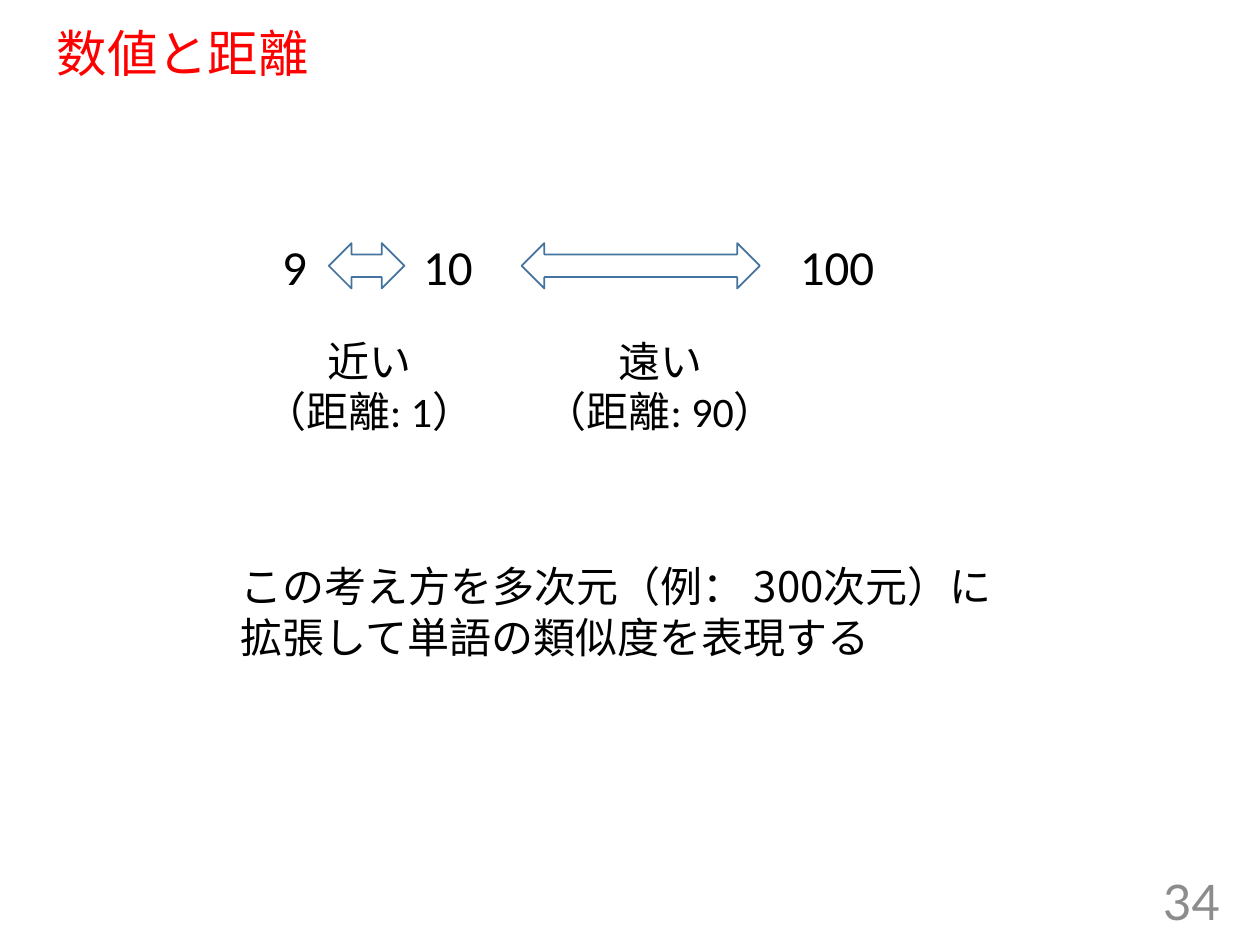
"""Build the slide on numbers and the distance between them."""
from pptx import Presentation
from pptx.dml.color import RGBColor
from pptx.enum.shapes import MSO_SHAPE
from pptx.enum.text import MSO_ANCHOR, PP_ALIGN
from pptx.util import Inches, Pt

RED = RGBColor(0xFF, 0x00, 0x00)
BLACK = RGBColor(0x00, 0x00, 0x00)
GRAY = RGBColor(0x8C, 0x8C, 0x8C)
BLUE = RGBColor(0x43, 0x73, 0x9E)


def write(paragraph, text, size, font, color, align=PP_ALIGN.LEFT):
    paragraph.alignment = align
    run = paragraph.add_run()
    run.text = text
    run.font.size = Pt(size)
    run.font.name = font
    run.font.color.rgb = color


def add_text(box, lines, size, font, color, align=PP_ALIGN.LEFT, wrap=True):
    frame = slide.shapes.add_textbox(*map(Inches, box)).text_frame
    frame.word_wrap = wrap
    for index, line in enumerate(lines):
        paragraph = frame.add_paragraph() if index else frame.paragraphs[0]
        write(paragraph, line, size, font, color, align)
    return frame


presentation = Presentation()
presentation.slide_width = Inches(10)
presentation.slide_height = Inches(7.5)
slide = presentation.slides.add_slide(presentation.slide_layouts[5])

heading = slide.shapes.title
heading.left, heading.top = Inches(0.35), Inches(0.19)
heading.width, heading.height = Inches(9.25), Inches(0.51)
heading.text_frame.vertical_anchor = MSO_ANCHOR.MIDDLE
heading.text_frame.paragraphs[0].line_spacing = 0.9
write(heading.text_frame.paragraphs[0], "数値と距離", 28.8, "Lato", RED)

page_number = add_text((7.53, 6.95, 2.25, 0.4), ["34"], 28, "Lato", GRAY, PP_ALIGN.RIGHT)
page_number.vertical_anchor = MSO_ANCHOR.MIDDLE

for number, left, width in (("9", 2.14, 0.4), ("10", 3.26, 0.6), ("100", 6.25, 0.8)):
    add_text((left, 1.83, width, 0.57), [number], 28, "Calibri", BLACK, wrap=False)

for left, width in ((2.61, 0.6), (4.14, 1.89)):
    gap = slide.shapes.add_shape(
        MSO_SHAPE.LEFT_RIGHT_ARROW, Inches(left), Inches(1.93), Inches(width), Inches(0.36)
    )
    gap.shadow.inherit = False
    gap.fill.background()
    gap.line.color.rgb = BLUE
    gap.line.width = Pt(1)

for left, closeness, distance in ((1.72, "近い", "（距離: 1）"), (4.03, "遠い", "（距離: 90）")):
    add_text((left, 2.61, 2.42, 0.91), [closeness, distance], 24, "Calibri", BLACK, PP_ALIGN.CENTER)

add_text(
    (1.81, 4.4, 6.49, 0.91),
    ["この考え方を多次元（例： 300次元）に拡張して単語の類似度を表現する"],
    24, "Noto Sans CJK JP", BLACK,
)

presentation.save("out.pptx")
